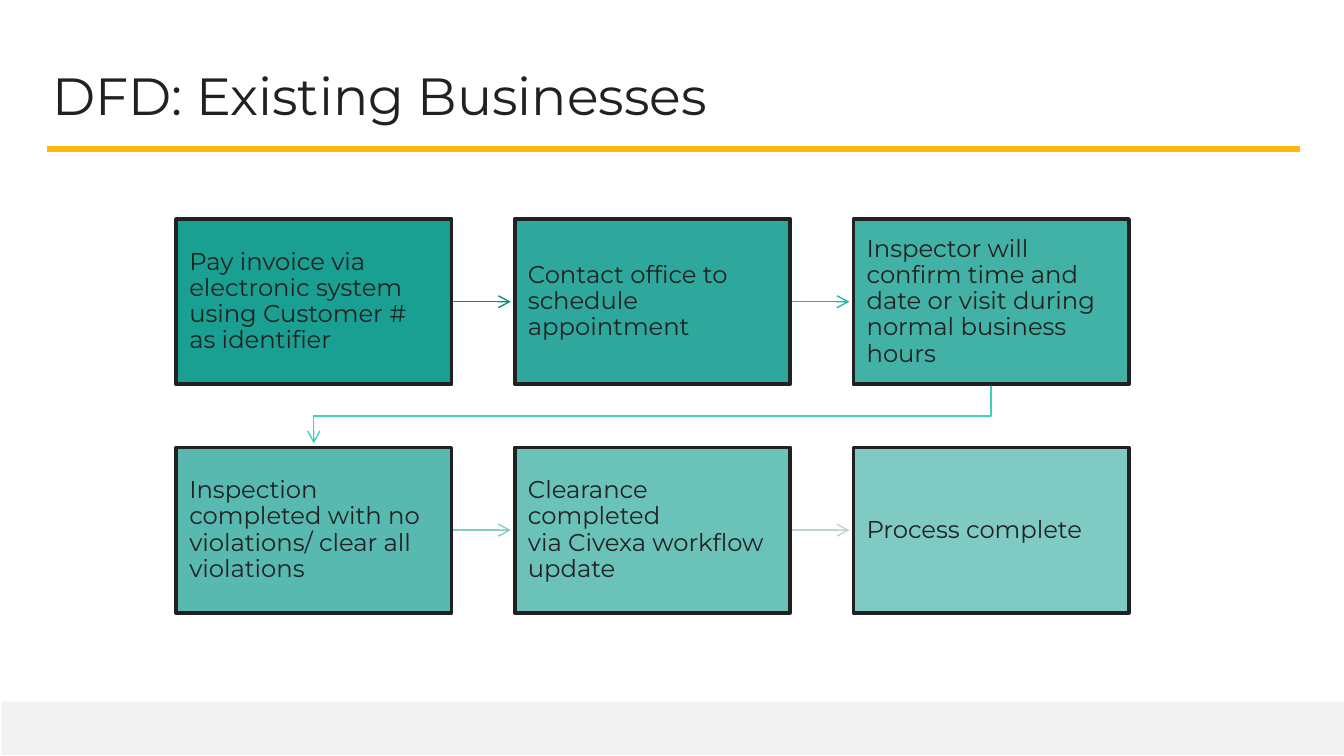
from lxml.etree import SubElement
from pptx import Presentation
from pptx.dml.color import RGBColor
from pptx.enum.shapes import MSO_CONNECTOR, MSO_SHAPE
from pptx.enum.text import MSO_ANCHOR, PP_ALIGN
from pptx.oxml.ns import qn
from pptx.util import Inches, Pt

INK = RGBColor(0x21, 0x21, 0x21)
TEAL = RGBColor(0x00, 0x96, 0x88)
AMBER = RGBColor(0xFE, 0xB7, 0x0D)
FOOTER_GREY = RGBColor(0xF2, 0xF2, 0xF2)
ARROW_COLORS = [
    RGBColor(0x00, 0x8F, 0x82),
    RGBColor(0x14, 0xBB, 0xA8),
    RGBColor(0x3F, 0xD0, 0xBC),
    RGBColor(0x84, 0xCB, 0xC0),
    RGBColor(0xBC, 0xD3, 0xCF),
]

FONT = "Montserrat"
NO_BREAK_SPACE = chr(160)
COLUMNS = 3
LEFT, TOP = 1.31, 1.63
STEP_WIDTH, STEP_HEIGHT = 2.05, 1.23
COLUMN_PITCH, ROW_PITCH = 2.52, 1.7
ARROW_LENGTH = 0.44

STEPS = [
    "Pay invoice via electronic system using Customer # as identifier",
    "Contact office to schedule appointment",
    "Inspector will confirm time and date or visit during normal business hours",
    "Inspection completed with no violations/ clear all violations",
    f"Clearance completed via{NO_BREAK_SPACE}Civexa{NO_BREAK_SPACE}workflow update",
    "Process complete",
]


def write(frame, text, size):
    frame.text = text
    frame.word_wrap = True
    frame.margin_left = frame.margin_right = Inches(0.1)
    frame.margin_top = frame.margin_bottom = Inches(0.1)
    paragraph = frame.paragraphs[0]
    paragraph.alignment = PP_ALIGN.LEFT
    font = paragraph.runs[0].font
    font.name, font.size, font.color.rgb = FONT, Pt(size), INK
    return paragraph


def add_title(slide, text):
    title = slide.shapes.add_textbox(Inches(0.29), Inches(0.37), Inches(9.32), Inches(0.63))
    write(title.text_frame, text, 28)


def add_rectangle(slide, left, top, width, height, color):
    rectangle = slide.shapes.add_shape(
        MSO_SHAPE.RECTANGLE, Inches(left), Inches(top), Inches(width), Inches(height))
    rectangle.shadow.inherit = False
    rectangle.fill.solid()
    rectangle.fill.fore_color.rgb = color
    rectangle.line.fill.background()
    return rectangle


def add_line(slide, start, end, color, width):
    line = slide.shapes.add_connector(
        MSO_CONNECTOR.STRAIGHT, *(Inches(value) for value in (*start, *end)))
    line.line.color.rgb = color
    line.line.width = Pt(width)
    SubElement(line._element.spPr, qn("a:effectLst"))
    return line


def add_arrowhead(line):
    outline = line._element.spPr.find(qn("a:ln"))
    SubElement(outline, qn("a:tailEnd"), type="arrow")


def add_bent_arrow(slide, points, color):
    start, *turns = [(Inches(x), Inches(y)) for x, y in points]
    builder = slide.shapes.build_freeform(*start)
    builder.add_line_segments(turns, close=False)
    bend = builder.convert_to_shape()
    bend.shadow.inherit = False
    bend.fill.background()
    bend.line.color.rgb = color
    bend.line.width = Pt(0.75)
    add_arrowhead(bend)


def step_position(index):
    row, column = divmod(index, COLUMNS)
    return LEFT + column * COLUMN_PITCH, TOP + row * ROW_PITCH


def add_step(slide, index, text):
    step = add_rectangle(slide, *step_position(index), STEP_WIDTH, STEP_HEIGHT, TEAL)
    opacity = 90 - 8 * index
    fill_color = step._element.spPr.find(qn("a:solidFill"))[0]
    SubElement(fill_color, qn("a:alpha"), val=str(opacity * 1000))
    step.line.color.rgb = INK
    step.line.width = Pt(2)
    step.text_frame.vertical_anchor = MSO_ANCHOR.MIDDLE
    write(step.text_frame, text, 13).line_spacing = 0.9


def add_step_arrow(slide, index, color):
    left, top = step_position(index)
    next_left, next_top = step_position(index + 1)
    if next_top == top:
        start = left + STEP_WIDTH
        middle = top + STEP_HEIGHT / 2
        arrow = add_line(slide, (start, middle), (start + ARROW_LENGTH, middle), color, 0.75)
        add_arrowhead(arrow)
    else:
        start_x, end_x = left + STEP_WIDTH / 2, next_left + STEP_WIDTH / 2
        bottom = top + STEP_HEIGHT
        turn = (bottom + next_top) / 2
        add_bent_arrow(
            slide,
            [(start_x, bottom), (start_x, turn), (end_x, turn), (end_x, bottom + ARROW_LENGTH)],
            color)


def main():
    presentation = Presentation()
    presentation.slide_width = Inches(10)
    presentation.slide_height = Inches(10) * 9 // 16
    slide = presentation.slides.add_slide(presentation.slide_layouts[6])

    add_rectangle(slide, 0.01, 5.22, 9.99, 0.4, FOOTER_GREY)
    add_line(slide, (0.35, 1.11), (9.67, 1.11), AMBER, 3)
    add_title(slide, "DFD: Existing Businesses")
    for index, color in enumerate(ARROW_COLORS):
        add_step_arrow(slide, index, color)
    for index, text in enumerate(STEPS):
        add_step(slide, index, text)

    presentation.save("out.pptx")


if __name__ == "__main__":
    main()
